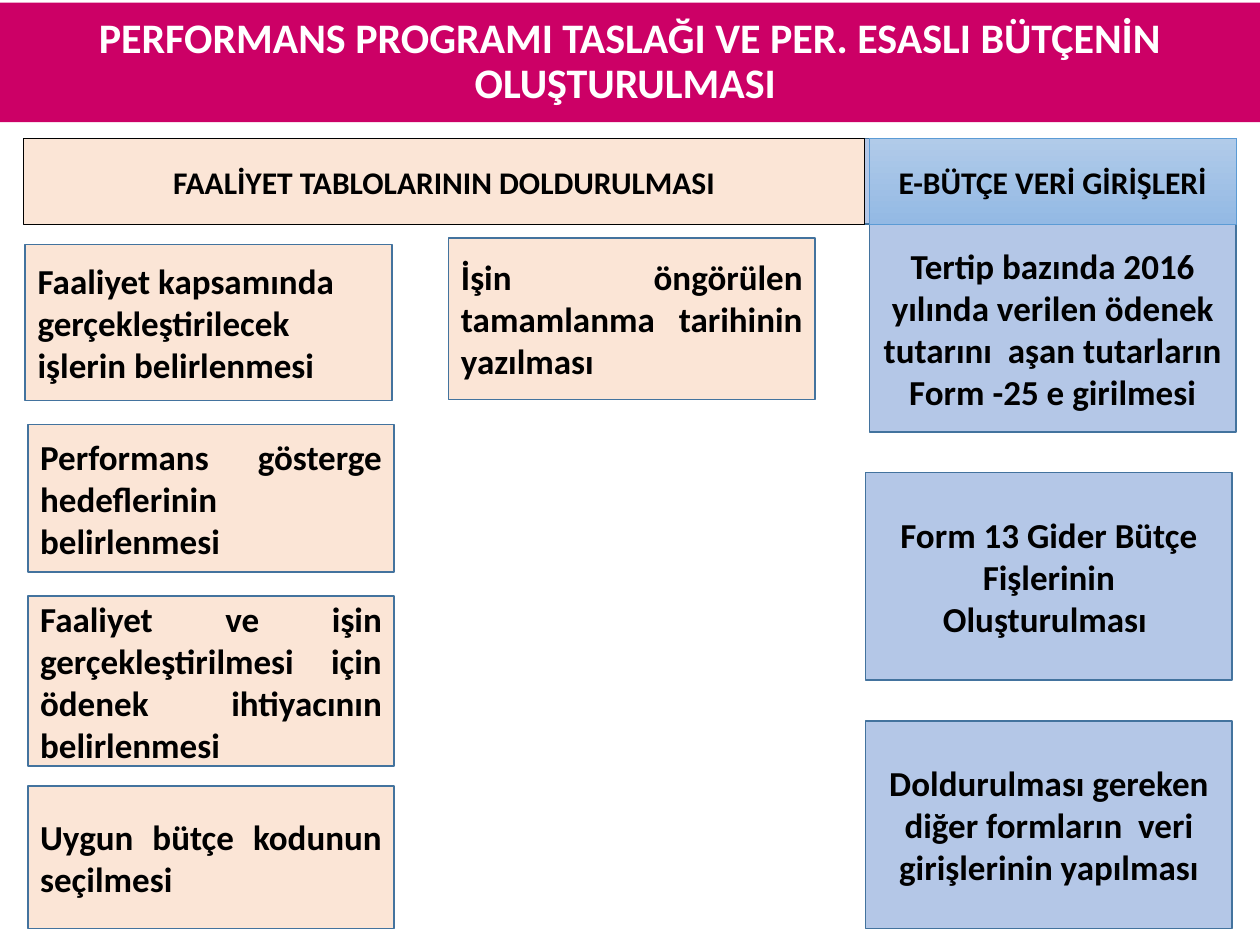
from dataclasses import dataclass

from pptx import Presentation
from pptx.dml.color import RGBColor
from pptx.enum.shapes import MSO_SHAPE
from pptx.enum.text import MSO_ANCHOR, MSO_AUTO_SIZE, PP_ALIGN
from pptx.util import Inches, Pt


@dataclass(frozen=True)
class Theme:
    font: str = "Calibri"
    title_size: int = 24
    heading_size: int = 18
    body_size: int = 20
    banner: str = "CC0066"
    peach: str = "FBE5D6"
    blue: str = "B4C7E7"
    gradient: tuple = ("B1CBE9", "93B9E4")
    outline: str = "43739E"
    light_outline: str = "5B9BD5"
    dark: str = "000000"
    light: str = "FFFFFF"


class SlideBuilder:
    def __init__(self, slide, theme):
        self.slide = slide
        self.theme = theme

    def add_text(self, shape, text, size, color, alignment):
        frame = shape.text_frame
        frame.word_wrap = True
        frame.auto_size = MSO_AUTO_SIZE.NONE
        frame.vertical_anchor = MSO_ANCHOR.MIDDLE
        paragraph = frame.paragraphs[0]
        paragraph.alignment = alignment
        run = paragraph.add_run()
        run.text = text
        run.font.name = self.theme.font
        run.font.size = Pt(size)
        run.font.bold = True
        run.font.color.rgb = RGBColor.from_string(color)
        return paragraph

    def title(self, text, left, top, width, height):
        shape = self.slide.shapes.title
        shape.left, shape.top = Inches(left), Inches(top)
        shape.width, shape.height = Inches(width), Inches(height)
        shape.fill.solid()
        shape.fill.fore_color.rgb = RGBColor.from_string(self.theme.banner)
        frame = shape.text_frame
        frame.margin_left = frame.margin_right = Inches(0.08)
        frame.margin_top = frame.margin_bottom = Inches(0.08)
        paragraph = self.add_text(shape, text, self.theme.title_size,
                                  self.theme.light, PP_ALIGN.CENTER)
        paragraph.line_spacing = 0.9
        paragraph.space_before = Pt(0)

    def panel(self, left, top, width, height, fill, outline=None, weight=1):
        shape = self.slide.shapes.add_shape(
            MSO_SHAPE.RECTANGLE,
            Inches(left), Inches(top), Inches(width), Inches(height))
        shape.shadow.inherit = False
        shape.fill.solid()
        shape.fill.fore_color.rgb = RGBColor.from_string(fill)
        shape.line.color.rgb = RGBColor.from_string(outline or self.theme.outline)
        shape.line.width = Pt(weight)
        return shape

    def step(self, text, left, top, width, height, fill, alignment):
        shape = self.panel(left, top, width, height, fill)
        self.add_text(shape, text, self.theme.body_size, self.theme.dark,
                      alignment)

    def heading(self, text, left, top, width, height, fill, outline):
        shape = self.panel(left, top, width, height, fill, outline, 0.5)
        self.add_text(shape, text, self.theme.heading_size, self.theme.dark,
                      PP_ALIGN.CENTER)
        return shape

    def gradient_heading(self, text, left, top, width, height):
        shape = self.heading(text, left, top, width, height,
                             self.theme.blue, self.theme.light_outline)
        shape.fill.gradient()
        shape.fill.gradient_angle = 270
        for stop, color in zip(shape.fill.gradient_stops, self.theme.gradient):
            stop.color.rgb = RGBColor.from_string(color)


BOX_WIDTH = 2.91
HEADING_TOP, HEADING_HEIGHT = 1.1, 0.68
ENTRY_TOP, ENTRY_HEIGHT, ENTRY_PITCH = 1.78, 1.65, 1.97

# text, left, top, height, alignment
ACTIVITY_STEPS = [
    ("Faaliyet kapsamında gerçekleştirilecek işlerin belirlenmesi",
     0.2, 1.94, 1.24, PP_ALIGN.LEFT),
    ("Performans gösterge hedeflerinin belirlenmesi",
     0.22, 3.37, 1.17, PP_ALIGN.JUSTIFY),
    ("Faaliyet ve işin gerçekleştirilmesi  için ödenek ihtiyacının belirlenmesi",
     0.22, 4.73, 1.35, PP_ALIGN.JUSTIFY),
    ("Uygun bütçe kodunun seçilmesi",
     0.22, 6.24, 1.13, PP_ALIGN.JUSTIFY),
    ("İşin öngörülen tamamlanma tarihinin yazılması",
     3.56, 1.89, 1.28, PP_ALIGN.JUSTIFY),
]

# text, left
BUDGET_ENTRIES = [
    ("Tertip bazında 2016 yılında verilen ödenek tutarını  aşan tutarların "
     "Form -25 e girilmesi", 6.9),
    ("Form 13 Gider Bütçe Fişlerinin Oluşturulması ", 6.87),
    ("Doldurulması gereken diğer formların  veri girişlerinin yapılması", 6.87),
]


def main():
    presentation = Presentation()
    presentation.slide_width = Inches(10)
    presentation.slide_height = Inches(7.5)
    theme = Theme()
    title_only = presentation.slide_layouts[5]
    builder = SlideBuilder(presentation.slides.add_slide(title_only), theme)

    builder.title("PERFORMANS PROGRAMI TASLAĞI VE PER. ESASLI BÜTÇENİN "
                  "OLUŞTURULMASI ", 0, 0.02, 10, 0.95)

    for text, left, top, height, alignment in ACTIVITY_STEPS:
        builder.step(text, left, top, BOX_WIDTH, height, theme.peach, alignment)
    for row, (text, left) in enumerate(BUDGET_ENTRIES):
        builder.step(text, left, ENTRY_TOP + row * ENTRY_PITCH, BOX_WIDTH,
                     ENTRY_HEIGHT, theme.blue, PP_ALIGN.CENTER)

    builder.panel(0.21, HEADING_TOP, 9.6, HEADING_HEIGHT, theme.blue)
    builder.heading("FAALİYET TABLOLARININ DOLDURULMASI", 0.19, HEADING_TOP,
                    6.67, HEADING_HEIGHT, theme.peach, theme.dark)
    builder.gradient_heading("E-BÜTÇE VERİ GİRİŞLERİ", 6.9, HEADING_TOP,
                             BOX_WIDTH, HEADING_HEIGHT)

    presentation.save("out.pptx")


if __name__ == "__main__":
    main()
